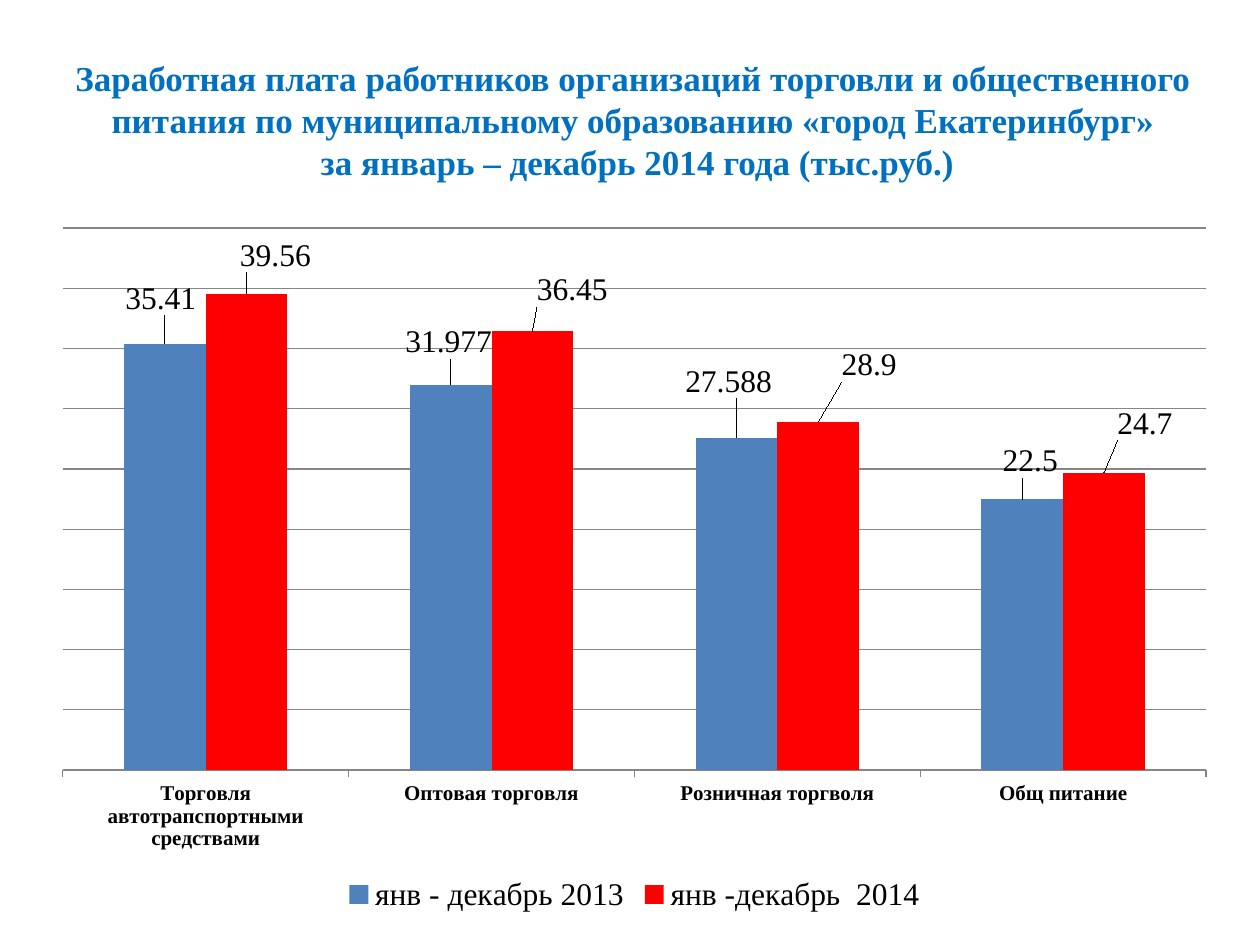
"""Build a slide comparing trade and catering wages in 2013 and 2014."""
from lxml.etree import SubElement, fromstring
from pptx import Presentation
from pptx.chart.data import CategoryChartData
from pptx.dml.color import RGBColor
from pptx.enum.chart import XL_CHART_TYPE, XL_LABEL_POSITION, XL_LEGEND_POSITION, XL_TICK_MARK
from pptx.enum.text import MSO_ANCHOR, MSO_AUTO_SIZE, PP_ALIGN
from pptx.oxml.ns import qn
from pptx.util import Pt

BLACK = RGBColor(0x00, 0x00, 0x00)
GREY = RGBColor(0x86, 0x86, 0x86)
TITLE_BLUE = RGBColor(0x00, 0x70, 0xC0)
BAR_BLUE = RGBColor(0x4F, 0x81, 0xBD)
BAR_RED = RGBColor(0xFF, 0x00, 0x00)
SERIF = "Times New Roman"
SCALE = 914400 / 126
CHART_W, CHART_H = 1191, 704
LEADER_LINES = (
    '<c:extLst xmlns:c="http://schemas.openxmlformats.org/drawingml/2006/chart">'
    '<c:ext uri="{CE6537A1-D6FC-4f65-9D91-7224C49458BB}"'
    ' xmlns:c15="http://schemas.microsoft.com/office/drawing/2012/chart">'
    '<c15:showLeaderLines val="1"/></c:ext></c:extLst>'
)


def box(*lengths):
    return [round(n * SCALE) for n in lengths]


def write(tf, text, size=18, color=BLACK, bold=False, font=SERIF, align=PP_ALIGN.LEFT):
    p = tf.paragraphs[0]
    p.text = text
    p.alignment = align
    for r in p.runs:
        r.font.size, r.font.bold, r.font.name = Pt(size), bold, font
        r.font.color.rgb = color


prs = Presentation()
prs.slide_width, prs.slide_height = box(1260, 945)
s = prs.slides.add_slide(prs.slide_layouts[5])

title = s.shapes.title
title.left, title.top, title.width, title.height = box(25, 45, 1216, 149)
tf = title.text_frame
tf.word_wrap, tf.auto_size = True, MSO_AUTO_SIZE.NONE
tf.vertical_anchor = MSO_ANCHOR.MIDDLE
write(tf, "Заработная плата работников организаций торговли и общественного питания "
      "по муниципальному образованию «город Екатеринбург»\v"
      " за январь – декабрь 2014 года (тыс.руб.)",
      size=20, color=TITLE_BLUE, bold=True, align=PP_ALIGN.CENTER)

data = CategoryChartData()
data.categories = ["Торговля автотрапспортными средствами", "Оптовая торговля",
                   "Розничная торгволя", "Общ питание"]
data.add_series("янв - декабрь 2013", (35.41, 31.977, 27.588, 22.5))
data.add_series("янв -декабрь  2014", (39.56, 36.45, 28.9, 24.7))
chart = s.shapes.add_chart(XL_CHART_TYPE.COLUMN_CLUSTERED,
                           *box(39, 214, CHART_W, CHART_H), data).chart
chart.has_title = False
chart.font.size, chart.font.name = Pt(18), "Calibri"
chart.font.color.rgb = BLACK

chart.has_legend = True
legend = chart.legend
legend.position, legend.include_in_layout = XL_LEGEND_POSITION.BOTTOM, False
legend.font.size, legend.font.name = Pt(18), SERIF

axis = chart.category_axis
axis.major_tick_mark = XL_TICK_MARK.OUTSIDE
axis.format.line.color.rgb = GREY
font = axis.tick_labels.font
font.size, font.bold, font.name = Pt(12), True, SERIF
font.color.rgb = BLACK

axis = chart.value_axis
axis.visible = False
axis.minimum_scale, axis.maximum_scale, axis.major_unit = 0, 45, 5
axis.has_major_gridlines = True
axis.major_gridlines.format.line.color.rgb = GREY

plot = chart.plots[0]
plot.gap_width, plot.overlap, plot.vary_by_categories = 150, 0, False
area = chart._chartSpace.chart.plotArea
for old in area.findall(qn("c:layout")):
    area.remove(old)
layout = SubElement(area, qn("c:layout"))
area.insert(0, layout)
manual = SubElement(layout, qn("c:manualLayout"))
for tag, val in (("layoutTarget", "inner"), ("xMode", "edge"), ("yMode", "edge"),
                 ("x", 0.02), ("y", 0.02), ("w", 0.96), ("h", 0.77)):
    SubElement(manual, qn(f"c:{tag}")).set("val", str(val))

formats = (
    (BAR_BLUE, ((-4, -23), (-2, -21), (-8, -34), (8, -16))),
    (BAR_RED, ((29, -16), (40, -19), (51, -35), (41, -27))),
)
for series, (color, shifts) in zip(plot.series, formats):
    series.format.fill.solid()
    series.format.fill.fore_color.rgb = color
    series.invert_if_negative = False
    labels = series.data_labels
    labels.show_value = True
    labels.font.size, labels.font.name = Pt(18), SERIF
    for i, (dx, dy) in enumerate(shifts):
        label = series.points[i].data_label
        label.font.size, label.font.name = Pt(18), SERIF
        label.position = XL_LABEL_POSITION.OUTSIDE_END
    for node, (dx, dy) in zip(series._element.iter(qn("c:dLbl")), shifts):
        layout = SubElement(node, qn("c:layout"))
        node.insert(1, layout)
        manual = SubElement(layout, qn("c:manualLayout"))
        SubElement(manual, qn("c:x")).set("val", f"{dx / CHART_W:.4f}")
        SubElement(manual, qn("c:y")).set("val", f"{dy / CHART_H:.4f}")
plot.series[0].data_labels._element.append(fromstring(LEADER_LINES))

prs.save("out.pptx")
